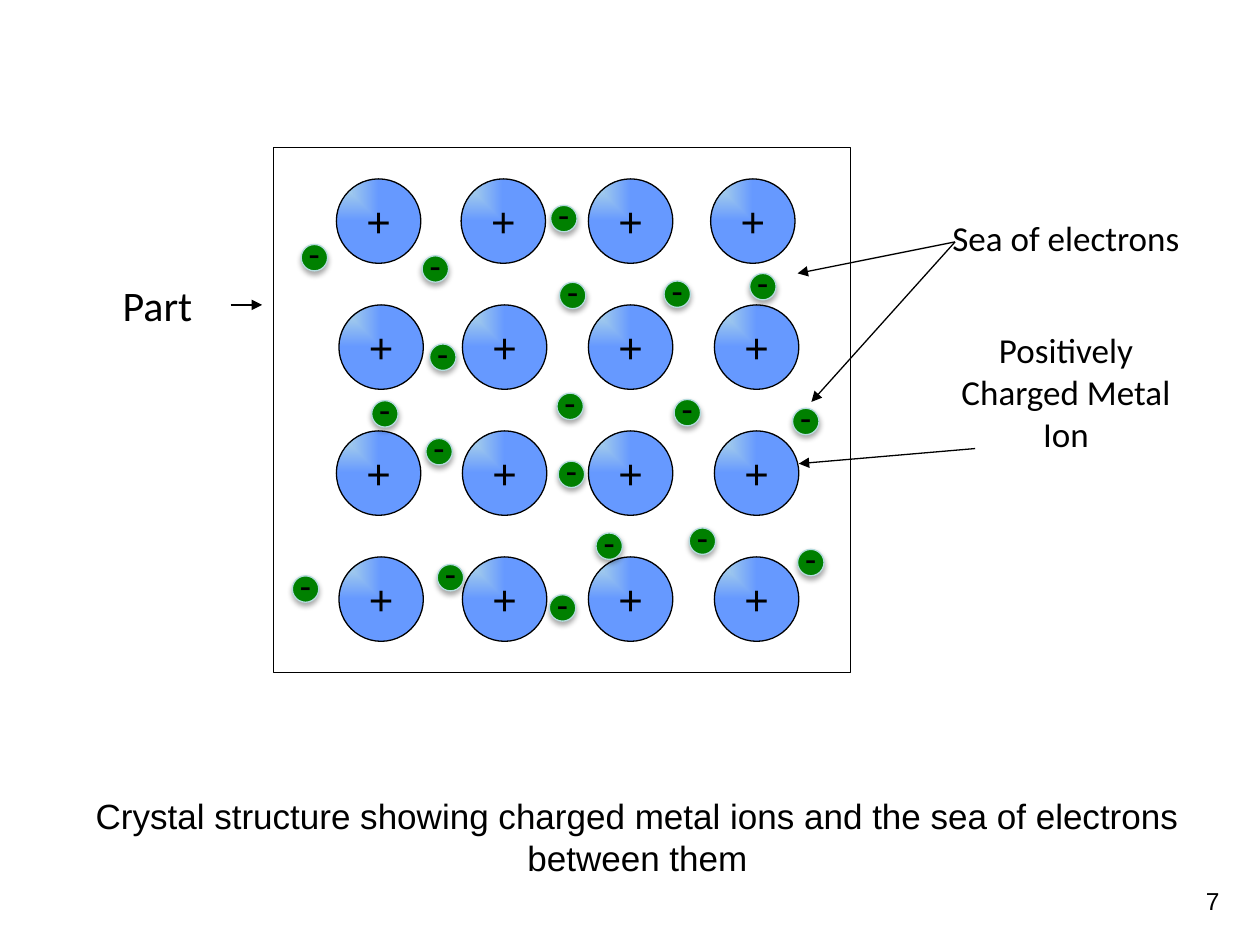
from lxml import etree
from pptx import Presentation
from pptx.dml.color import RGBColor
from pptx.enum.shapes import MSO_CONNECTOR, MSO_SHAPE
from pptx.enum.text import MSO_ANCHOR, PP_ALIGN
from pptx.oxml import parse_xml
from pptx.oxml.ns import nsdecls, qn
from pptx.util import Pt

OVAL, RECT = MSO_SHAPE.OVAL, MSO_SHAPE.RECTANGLE
LINE = MSO_CONNECTOR.STRAIGHT
LEFT, MID = PP_ALIGN.LEFT, PP_ALIGN.CENTER
CORE = MSO_ANCHOR.MIDDLE
BLACK = RGBColor(0x00, 0x00, 0x00)
PALE = RGBColor(0xBB, 0xE0, 0xE3)
BLUE = RGBColor(0x66, 0x99, 0xFF)
GREEN = RGBColor(0x00, 0x80, 0x00)
RIM = RGBColor(0xB6, 0xDC, 0xDF)
PX = 9144

GLOW = f"""<a:path {nsdecls('a')} path="rect">
<a:fillToRect r="100000" b="100000"/></a:path>"""
SHADE = f"""<a:effectLst {nsdecls('a')}>
<a:outerShdw blurRad="40000" dist="23000" dir="5400000" rotWithShape="0">
<a:srgbClr val="000000"><a:alpha val="35000"/></a:srgbClr>
</a:outerShdw></a:effectLst>"""

deck = Presentation()
deck.slide_width, deck.slide_height = 1000 * PX, 750 * PX
slide = deck.slides.add_slide(deck.slide_layouts[6])
shapes = slide.shapes


def draw(home, kind, box, edge):
    shape = home.add_shape(kind, *[n * PX for n in box])
    shape.shadow.inherit = False
    shape.line.color.rgb = edge
    shape.line.width = Pt(0.75)
    return shape


def write(frame, lines, size, face, align=MID, wrap=True, gap=0):
    frame.word_wrap = wrap
    for i, line in enumerate(lines):
        para = frame.paragraphs[0] if i == 0 else frame.add_paragraph()
        para.text = line
        para.alignment = align
        if i:
            para.space_before = Pt(gap)
        style = {"size": Pt(size), "name": face}
        for key, value in style.items():
            setattr(para.font, key, value)
        para.font.color.rgb = BLACK


ions = [
    (267, 366, 467, 564),
    (269, 367, 467, 567),
    (267, 367, 467, 567),
    (269, 367, 467, 567),
]
for row, lefts in enumerate(ions):
    for x in lefts:
        ion = draw(shapes, OVAL, (x, 142 + 100 * row, 67, 67), BLACK)
        ion.fill.gradient()
        for stop, color, spot in zip(ion.fill.gradient_stops, (PALE, BLUE), (0, 1)):
            stop.color.rgb = color
            stop.position = spot
        grad = ion._element.spPr.find(qn("a:gradFill"))
        grad.replace(grad.find(qn("a:lin")), parse_xml(GLOW))
        ion.text_frame.vertical_anchor = CORE
        write(ion.text_frame, ["+"], 24, "Arial", wrap=False)

draw(shapes, RECT, (217, 117, 458, 417), BLACK).fill.background()

labels = [
    ((742, 167, 208, 276), ["Sea of electrons", "Positively Charged Metal Ion"], 20, "Calibri"),
    ((50, 217, 150, 50), ["Part"], 24, "Calibri"),
    ((31, 626, 950, 77), ["Crystal structure showing charged metal ions and the sea of electrons between them"], 20, "Arial"),
    ((938, 698, 49, 36), ["7"], 14, "Arial"),
]
for box, lines, size, face in labels:
    text = shapes.add_textbox(*[n * PX for n in box])
    write(text.text_frame, lines, size, face, gap=40)

arrows = [
    (758, 192, 633, 217),
    (758, 192, 644, 319),
    (774, 356, 634, 368),
    (183, 242, 208, 242),
]
for ends in arrows:
    arrow = shapes.add_connector(LINE, *[n * PX for n in ends])
    arrow.line.color.rgb = BLACK
    arrow.line.width = Pt(0.75)
    props = arrow._element.spPr
    etree.SubElement(props.find(qn("a:ln")), qn("a:tailEnd"), type="triangle")
    etree.SubElement(props, qn("a:effectLst"))

spots = [
    (335, 203), (341, 273), (444, 224), (437, 163), (442, 312),
    (295, 318), (527, 223), (443, 366), (338, 348), (595, 217),
    (629, 324), (547, 419), (436, 472), (347, 448), (473, 423),
    (633, 436), (535, 317), (239, 194), (232, 457),
]
for x, y in spots:
    group = shapes.add_group_shape().shapes
    dot = draw(group, OVAL, (x, y, 21, 21), RIM)
    dot.fill.solid()
    dot.fill.fore_color.rgb = GREEN
    props = dot._element.spPr
    props.replace(props.find(qn("a:effectLst")), parse_xml(SHADE))
    sign = group.add_textbox(*[n * PX for n in (x - 4, y - 15, 30, 44)])
    write(sign.text_frame, ["-"], 20, "Arial", align=LEFT, wrap=False)

deck.save("out.pptx")
